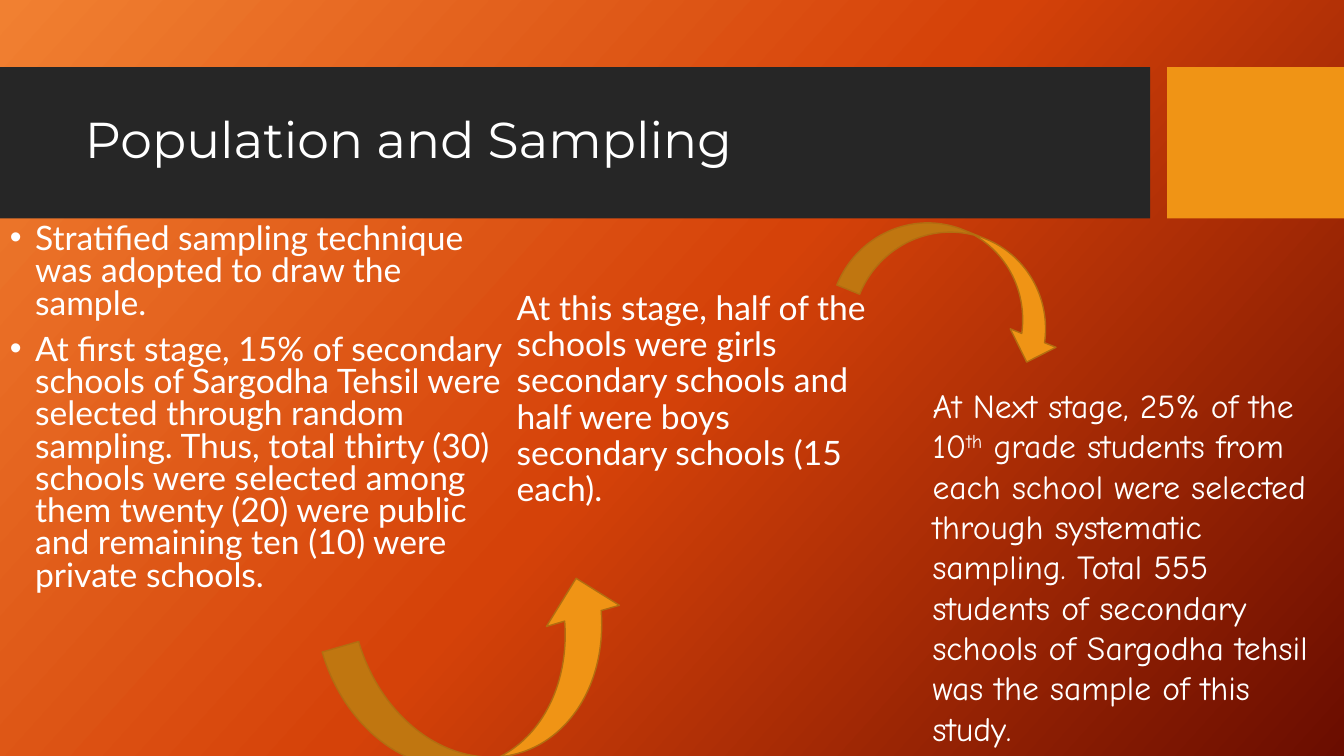
from copy import deepcopy
from dataclasses import dataclass

from lxml.etree import SubElement
from pptx import Presentation
from pptx.dml.color import RGBColor
from pptx.enum.shapes import MSO_SHAPE
from pptx.enum.text import MSO_ANCHOR, MSO_AUTO_SIZE, PP_ALIGN
from pptx.oxml.ns import qn
from pptx.util import Pt


@dataclass(frozen=True)
class Theme:
    """Colours, fonts and type sizes of the slide."""
    gradient: tuple = ("F18031", "D54209", "6A0D00")
    gradient_angle: int = 42
    band: str = "262626"
    accent: str = "F09415"
    outline: str = "B26D10"
    text: str = "FFFFFF"
    title_font: str = "Montserrat"
    body_font: str = "Lato"
    note_font: str = "Comic Neue"
    title_size: int = 36
    body_size: int = 24


THEME = Theme()
TITLE = "Population and Sampling"
FIRST_STAGE = (
    "Stratified sampling technique was adopted to draw the sample.",
    "At first stage, 15% of secondary schools of Sargodha Tehsil were selected "
    "through random sampling. Thus, total thirty (30) schools were selected among "
    "them twenty (20) were public and remaining ten (10) were private schools.",
)
SECOND_STAGE = (
    "At this stage, half of the schools were girls secondary schools and half "
    "were boys secondary schools (15 each).",
)
NEXT_STAGE = (
    "At Next stage, 25% of the 10",
    "th",
    " grade students from each school were selected through systematic sampling. "
    "Total 555 students of secondary schools of Sargodha tehsil was the sample of "
    "this study.",
)


def paint_background(slide):
    """Fill the slide with evenly spaced gradient stops."""
    fill = slide.background.fill
    fill.gradient()
    stop_list = next(slide.element.iter(qn("a:gsLst")))
    while len(stop_list) < len(THEME.gradient):
        stop_list.append(deepcopy(stop_list[0]))
    for index, (stop, colour) in enumerate(zip(fill.gradient_stops, THEME.gradient)):
        stop.position = index / (len(THEME.gradient) - 1)
        stop.color.rgb = RGBColor.from_string(colour)
    fill.gradient_angle = 360 - THEME.gradient_angle


def add_figure(slide, kind, bounds, colour, outline=None, rotation=0):
    """Add a filled preset shape, with an outline if a colour is given."""
    figure = slide.shapes.add_shape(kind, *map(Pt, bounds))
    figure.shadow.inherit = False
    figure.rotation = rotation
    figure.fill.solid()
    figure.fill.fore_color.rgb = RGBColor.from_string(colour)
    if outline:
        figure.line.color.rgb = RGBColor.from_string(outline)
        figure.line.width = Pt(1)
    else:
        figure.line.fill.background()


def style_paragraph(para, font_name, size, spacing=1.0):
    """Set the alignment, line spacing and font of a paragraph."""
    para.alignment = PP_ALIGN.LEFT
    para.line_spacing = spacing
    para.font.name = font_name
    para.font.size = Pt(size)
    para.font.color.rgb = RGBColor.from_string(THEME.text)


def add_bullet(para):
    """Give a paragraph a round bullet and a hanging indent."""
    properties = para._p.get_or_add_pPr()
    properties.set("marL", str(Pt(18)))
    properties.set("indent", str(Pt(-18)))
    SubElement(properties, qn("a:buFont")).set("typeface", "Arial")
    SubElement(properties, qn("a:buChar")).set("char", "•")


def place_title(slide):
    """Move, fill and format the title placeholder."""
    title = slide.shapes.title
    title.left, title.top, title.width, title.height = map(Pt, (53.5, 59, 756.5, 85))
    frame = title.text_frame
    frame.text = TITLE
    frame.word_wrap = True
    frame.auto_size = MSO_AUTO_SIZE.NONE
    frame.vertical_anchor = MSO_ANCHOR.MIDDLE
    style_paragraph(frame.paragraphs[0], THEME.title_font, THEME.title_size, 0.9)
    slide.shapes._spTree.append(title._element)


def add_frame(slide, bounds):
    """Add a wrapping text box and return its text frame."""
    frame = slide.shapes.add_textbox(*map(Pt, bounds)).text_frame
    frame.word_wrap = True
    return frame


def add_body(slide, bounds, texts, spacing, bulleted=False):
    """Add a box of body paragraphs."""
    frame = add_frame(slide, bounds)
    for index, text in enumerate(texts):
        para = frame.add_paragraph() if index else frame.paragraphs[0]
        para.text = text
        if bulleted:
            add_bullet(para)
        if index:
            para.space_before = Pt(10)
        style_paragraph(para, THEME.body_font, THEME.body_size, spacing)


def add_note(slide, bounds, before, raised, after):
    """Add a box whose text holds one superscript part."""
    frame = add_frame(slide, bounds)
    frame.auto_size = MSO_AUTO_SIZE.SHAPE_TO_FIT_TEXT
    para = frame.paragraphs[0]
    for text in (before, raised, after):
        span = para.add_run()
        span.text = text
        if text == raised:
            span._r.get_or_add_rPr().set("baseline", "30000")
    style_paragraph(para, THEME.note_font, THEME.body_size)


def main():
    """Build the slide and save the deck."""
    deck = Presentation()
    deck.slide_width, deck.slide_height = Pt(960), Pt(540)
    slide = deck.slides.add_slide(deck.slide_layouts[5])
    paint_background(slide)
    add_figure(slide, MSO_SHAPE.RECTANGLE, (0, 48, 821.5, 108), THEME.band)
    add_figure(slide, MSO_SHAPE.RECTANGLE, (833.75, 48, 126.25, 108), THEME.accent)
    place_title(slide)
    add_body(slide, (0, 157, 370, 301), FIRST_STAGE, 0.8, bulleted=True)
    add_body(slide, (362, 204.5, 268.5, 219), SECOND_STAGE, 0.9)
    add_note(slide, (659, 271.5, 301, 269), *NEXT_STAGE)
    add_figure(slide, MSO_SHAPE.CURVED_UP_ARROW, (241, 433.5, 216, 108.5),
               THEME.accent, THEME.outline, 343.8)
    add_figure(slide, MSO_SHAPE.CURVED_DOWN_ARROW, (605, 166.5, 164, 70.5),
               THEME.accent, THEME.outline, 22.1)
    deck.save("out.pptx")


if __name__ == "__main__":
    main()
